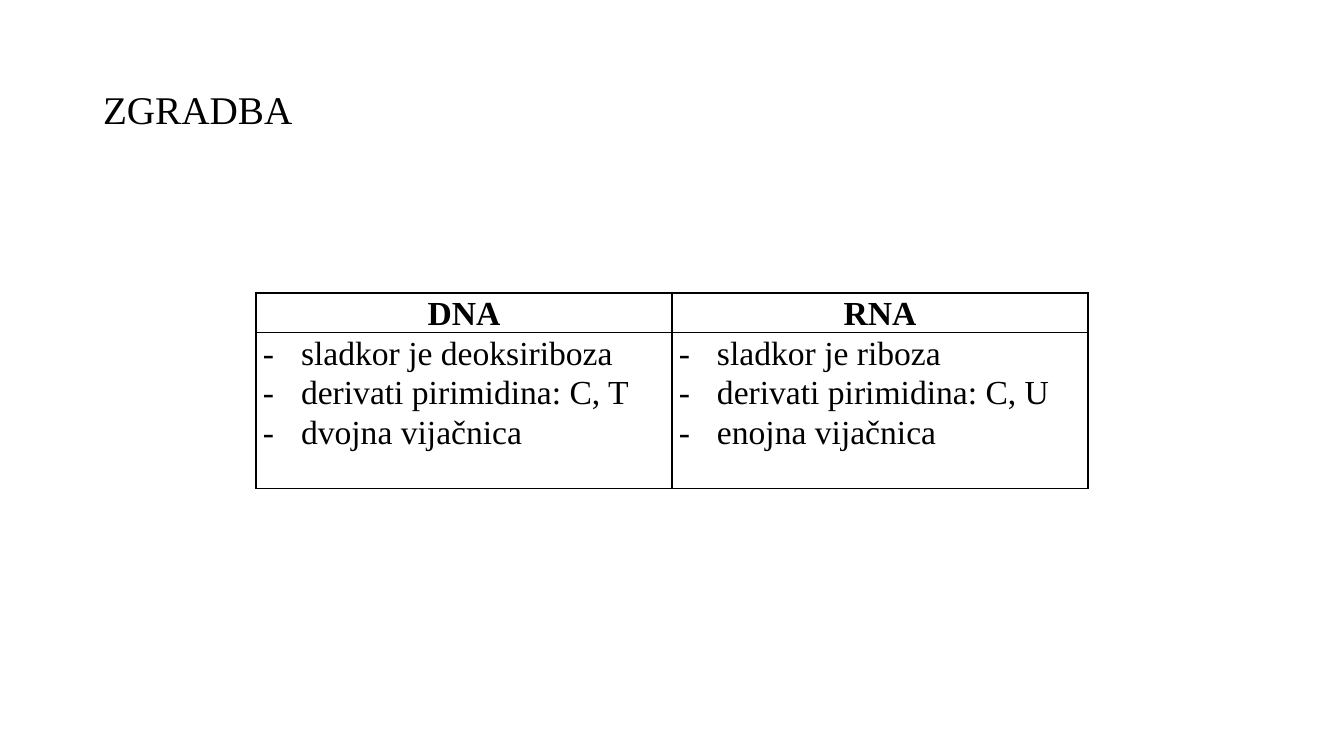
from pptx import Presentation
from pptx.dml.color import RGBColor
from pptx.enum.text import PP_ALIGN
from pptx.oxml.ns import qn
from pptx.util import Pt
from lxml.etree import SubElement

PX = 914400 / 100.8
COLORS = {"ink": "000000"}
FONT = "Times New Roman"
COLUMNS = {
    "DNA": ["sladkor je deoksiriboza", "derivati pirimidina: C, T", "dvojna vijačnica"],
    "RNA": ["sladkor je riboza", "derivati pirimidina: C, U", "enojna vijačnica"],
}
ROW_HEIGHTS = [39, 156]
COLUMN_WIDTH = 416
CELL_MARGIN = 7
BULLET_INDENT = 38


def px(length):
    return round(length * PX)


def format_runs(paragraph, size, bold=False):
    for run in paragraph.runs:
        run.font.name = FONT
        run.font.size = Pt(size)
        run.font.bold = bold
        run.font.color.rgb = RGBColor.from_string(COLORS["ink"])


presentation = Presentation()
presentation.slide_width = px(1344)
presentation.slide_height = px(756)
slide = presentation.slides.add_slide(presentation.slide_layouts[1])
title = slide.shapes.title
title.element.getparent().remove(title.element)

# Heading
heading = slide.placeholders[1]
heading.left, heading.top = px(93), px(86)
heading.width, heading.height = px(1159), px(595)
heading.text_frame.text = "ZGRADBA"
paragraph = heading.text_frame.paragraphs[0]
properties = paragraph._p.get_or_add_pPr()
properties.set("marL", "0")
properties.set("indent", "0")
SubElement(properties, qn("a:buNone"))
paragraph.line_spacing = 0.9
paragraph.space_before = Pt(0)
format_runs(paragraph, 28)

# Comparison table
table = slide.shapes.add_table(
    len(ROW_HEIGHTS), len(COLUMNS), px(256), px(293),
    px(COLUMN_WIDTH * len(COLUMNS)), px(sum(ROW_HEIGHTS))).table
table.first_row = False
table.horz_banding = False
for row, height in zip(table.rows, ROW_HEIGHTS):
    row.height = px(height)

for column, (acid, features) in enumerate(COLUMNS.items()):
    table.columns[column].width = px(COLUMN_WIDTH)
    header, body = table.cell(0, column), table.cell(1, column)
    header.text_frame.text = acid
    body.text_frame.text = "\n".join(features)

    for cell in (header, body):
        cell.margin_left = cell.margin_right = px(CELL_MARGIN)
        cell.margin_top = cell.margin_bottom = 0
        cell_properties = cell._tc.get_or_add_tcPr()
        for side in ("lnL", "lnR", "lnT", "lnB"):
            border = SubElement(cell_properties, qn(f"a:{side}"), w=str(Pt(1)))
            fill = SubElement(border, qn("a:solidFill"))
            SubElement(fill, qn("a:srgbClr"), val=COLORS["ink"])
        cell.fill.background()

        for paragraph in cell.text_frame.paragraphs:
            paragraph.line_spacing = 1.07
            if cell is header:
                paragraph.alignment = PP_ALIGN.CENTER
            else:
                properties = paragraph._p.get_or_add_pPr()
                properties.set("marL", str(px(BULLET_INDENT)))
                properties.set("indent", str(-px(BULLET_INDENT)))
                SubElement(properties, qn("a:buFont"), typeface=FONT)
                SubElement(properties, qn("a:buChar"), char="-")
            format_runs(paragraph, 24, bold=cell is header)

presentation.save("out.pptx")
